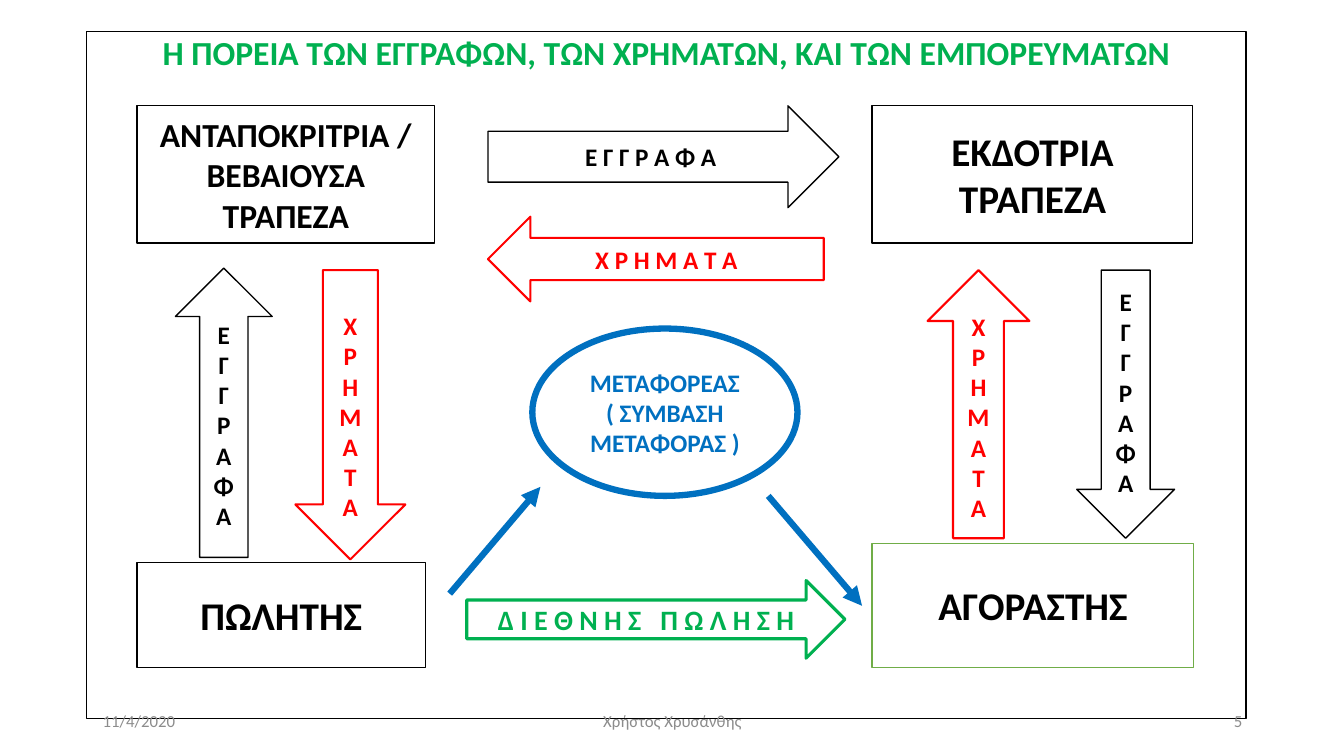
from lxml.etree import SubElement
from pptx import Presentation
from pptx.dml.color import RGBColor
from pptx.enum.shapes import MSO_CONNECTOR, MSO_SHAPE
from pptx.enum.text import MSO_ANCHOR, MSO_AUTO_SIZE, PP_ALIGN
from pptx.oxml.ns import qn
from pptx.util import Inches, Pt

COLORS = {
    "white": "FFFFFF",
    "black": "000000",
    "money": "FF0000",
    "carrier": "0070C0",
    "sale": "00B050",
    "buyer": "70AD47",
    "footer": "8C8C8C",
}
FONT = "Calibri"
DOCUMENTS = "ΕΓΓΡΑΦΑ"
MONEY = "ΧΡΗΜΑΤΑ"


def color(name):
    return RGBColor.from_string(COLORS[name])


def spaced(word):
    return " ".join(word)


def stacked(word):
    """Put each letter in a paragraph of its own."""
    return "\n".join(word)


class FlowSlide:
    def __init__(self, page):
        self.page = page

    def set_text(self, shape, text, size, ink, bold=True, align=PP_ALIGN.CENTER,
                 anchor=MSO_ANCHOR.MIDDLE):
        frame = shape.text_frame
        frame.text = text
        frame.word_wrap = True
        frame.auto_size = MSO_AUTO_SIZE.NONE
        frame.vertical_anchor = anchor
        for para in frame.paragraphs:
            para.alignment = align
            for span in para.runs:
                span.font.name = FONT
                span.font.size = Pt(size)
                span.font.bold = bold
                span.font.color.rgb = color(ink)

    def outline(self, shape, ink, width):
        shape.fill.solid()
        shape.fill.fore_color.rgb = color("white")
        shape.line.color.rgb = color(ink)
        shape.line.width = Pt(width)

    def framed_title(self, text, left, top, width, height):
        title = self.page.shapes.title
        title.left, title.top = Inches(left), Inches(top)
        title.width, title.height = Inches(width), Inches(height)
        self.outline(title, "black", 1)
        self.set_text(title, text, 24, "sale", anchor=MSO_ANCHOR.TOP)
        para = title.text_frame.paragraphs[0]
        para.line_spacing = 0.9
        para.space_before = Pt(10)

    def shape(self, kind, place, text, size, ink="black", line=None, width=1):
        shape = self.page.shapes.add_shape(kind, *map(Inches, place))
        shape.shadow.inherit = False
        self.outline(shape, line or ink, width)
        self.set_text(shape, text, size, ink)
        return shape

    def party(self, place, text, size=28, line="black"):
        return self.shape(MSO_SHAPE.FLOWCHART_PROCESS, place, text, size, line=line)

    def documents_arrow(self, kind, place, text):
        return self.shape(kind, place, text, 18)

    def money_arrow(self, kind, place, text):
        return self.shape(kind, place, text, 18, "money", width=1.5)

    def carrier_link(self, start, end):
        link = self.page.shapes.add_connector(
            MSO_CONNECTOR.STRAIGHT, *map(Inches, (*start, *end)))
        link.line.color.rgb = color("carrier")
        link.line.width = Pt(4.5)
        properties = link._element.spPr
        SubElement(properties.find(qn("a:ln")), qn("a:tailEnd"), type="triangle")
        SubElement(properties, qn("a:effectLst"))

    def footer(self, left, width, text, align):
        box = self.page.shapes.add_textbox(
            Inches(left), Inches(6.95), Inches(width), Inches(0.4))
        self.set_text(box, text, 12, "footer", bold=False, align=align)


def main():
    deck = Presentation()
    deck.slide_width, deck.slide_height = Inches(13.33), Inches(7.5)
    flow = FlowSlide(deck.slides.add_slide(deck.slide_layouts[5]))

    flow.framed_title("Η ΠΟΡΕΙΑ ΤΩΝ ΕΓΓΡΑΦΩΝ, ΤΩΝ ΧΡΗΜΑΤΩΝ, ΚΑΙ ΤΩΝ ΕΜΠΟΡΕΥΜΑΤΩΝ",
                      0.86, 0.31, 11.5, 6.82)

    flow.party((1.36, 5.58, 2.86, 1.04), "ΠΩΛΗΤΗΣ")
    flow.party((1.36, 1.05, 2.95, 1.36), "ΑΝΤΑΠΟΚΡΙΤΡΙΑ /\nΒΕΒΑΙΟΥΣΑ\nΤΡΑΠΕΖΑ", size=24)
    flow.party((8.65, 1.05, 3.18, 1.36), "ΕΚΔΟΤΡΙΑ\nΤΡΑΠΕΖΑ")
    flow.party((8.65, 5.39, 3.19, 1.23), "ΑΓΟΡΑΣΤΗΣ", line="buyer")

    flow.documents_arrow(MSO_SHAPE.UP_ARROW, (1.74, 2.66, 0.96, 2.87), stacked(DOCUMENTS))
    flow.documents_arrow(MSO_SHAPE.RIGHT_ARROW, (4.84, 1.05, 3.48, 1.01), spaced(DOCUMENTS))
    flow.documents_arrow(MSO_SHAPE.DOWN_ARROW, (10.68, 2.68, 0.97, 2.66), stacked(DOCUMENTS))

    seller_money = flow.money_arrow(
        MSO_SHAPE.DOWN_ARROW, (2.93, 2.68, 1.09, 2.87), stacked(MONEY))
    seller_money.text_frame.margin_top = Inches(0.35)
    flow.money_arrow(MSO_SHAPE.LEFT_ARROW, (4.84, 2.15, 3.33, 0.84), spaced(MONEY))
    flow.money_arrow(MSO_SHAPE.UP_ARROW, (9.2, 2.68, 1.01, 2.66), stacked(MONEY))

    flow.shape(MSO_SHAPE.OVAL, (5.28, 3.26, 2.63, 1.66),
               "ΜΕΤΑΦΟΡΕΑΣ\n( ΣΥΜΒΑΣΗ ΜΕΤΑΦΟΡΑΣ )", 18, "carrier", width=4.5)
    flow.carrier_link((4.46, 5.89), (5.36, 4.83))
    flow.carrier_link((7.62, 4.92), (8.55, 6.01))
    flow.shape(MSO_SHAPE.RIGHT_ARROW, (4.63, 5.76, 3.75, 0.77),
               spaced("ΔΙΕΘΝΗΣ ΠΩΛΗΣΗ"), 20, "sale", width=2.25)

    flow.footer(0.92, 3, "11/4/2020", PP_ALIGN.LEFT)
    flow.footer(4.42, 4.5, "Χρήστος Χρυσάνθης", PP_ALIGN.CENTER)
    flow.footer(9.42, 3, "5", PP_ALIGN.RIGHT)

    deck.save("out.pptx")


if __name__ == "__main__":
    main()
